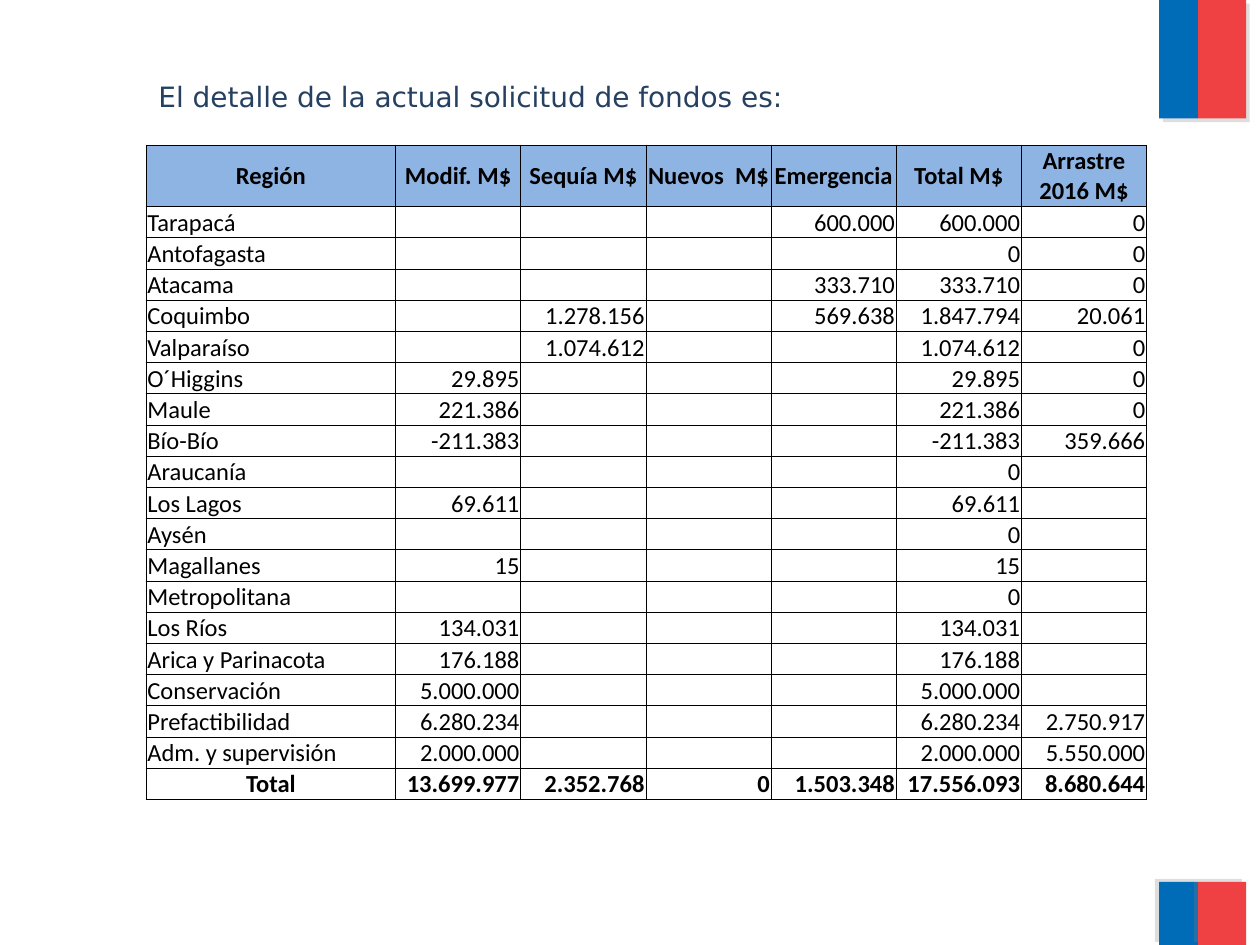
import pptx
import pptx.util
import pptx.dml.color
import pptx.enum.shapes
import pptx.enum.text
import pptx.oxml
import pptx.oxml.ns
import lxml.etree

Inches, Pt = pptx.util.Inches, pptx.util.Pt
ALIGN = pptx.enum.text.PP_ALIGN
ANCHOR = pptx.enum.text.MSO_ANCHOR
qn = pptx.oxml.ns.qn

COLORS = {"blue": "006CB7", "red": "EF4144", "shade": "808080",
          "title": "254061", "head": "8EB4E3", "ink": "000000"}

TITLE = "El detalle de la actual solicitud de fondos es:"
HEAD = ["Región", "Modif. M$", "Sequía M$", "Nuevos  M$", "Emergencia",
        "Total M$", "Arrastre 2016 M$"]
BODY = [
    ("Tarapacá", "", "", "", "600.000", "600.000", "0"),
    ("Antofagasta", "", "", "", "", "0", "0"),
    ("Atacama", "", "", "", "333.710", "333.710", "0"),
    ("Coquimbo", "", "1.278.156", "", "569.638", "1.847.794", "20.061"),
    ("Valparaíso", "", "1.074.612", "", "", "1.074.612", "0"),
    ("O´Higgins", "29.895", "", "", "", "29.895", "0"),
    ("Maule", "221.386", "", "", "", "221.386", "0"),
    ("Bío-Bío", "-211.383", "", "", "", "-211.383", "359.666"),
    ("Araucanía", "", "", "", "", "0", ""),
    ("Los Lagos", "69.611", "", "", "", "69.611", ""),
    ("Aysén", "", "", "", "", "0", ""),
    ("Magallanes", "15", "", "", "", "15", ""),
    ("Metropolitana", "", "", "", "", "0", ""),
    ("Los Ríos", "134.031", "", "", "", "134.031", ""),
    ("Arica y Parinacota", "176.188", "", "", "", "176.188", ""),
    ("Conservación", "5.000.000", "", "", "", "5.000.000", ""),
    ("Prefactibilidad", "6.280.234", "", "", "", "6.280.234", "2.750.917"),
    ("Adm. y supervisión", "2.000.000", "", "", "", "2.000.000", "5.550.000"),
]
TOTAL = ("Total", "13.699.977", "2.352.768", "0", "1.503.348",
         "17.556.093", "8.680.644")
ROWS = [HEAD, *BODY, TOTAL]

BANDS = [("blue", 9.2, 0.31), ("red", 9.51, 0.38)]
FLAGS = [(0, 0.94, 45), (7, 0.5, 215)]
LEFT, TOP, WIDE, HIGH = 1.16, 1.15, 7.94, 5.2
FIRST, HEAD_H = 1.98, 0.49
INSET = {"margin_left": Inches(0.01), "margin_right": Inches(0.01),
         "margin_top": Inches(0.01), "margin_bottom": 0}


def rgb(name):
    return pptx.dml.color.RGBColor.from_string(COLORS[name])


def style(item, values):
    for key, value in values.items():
        setattr(item, key, value)


def write(para, text, color, values):
    run = para.add_run()
    run.text = text
    style(run.font, values)
    run.font.color.rgb = rgb(color)


def add_band(slide, color, left, top, width, height, angle):
    band = slide.shapes.add_shape(
        pptx.enum.shapes.MSO_SHAPE.RECTANGLE,
        Inches(left), Inches(top), Inches(width), Inches(height))
    band.fill.solid()
    band.fill.fore_color.rgb = rgb(color)
    band.line.fill.background()
    band.shadow.inherit = False
    glow = band._element.spPr.find(qn("a:effectLst"))
    cast = lxml.etree.SubElement(
        glow, qn("a:outerShdw"), blurRad="0", dist=str(Pt(3)),
        dir=str(angle * 60000), algn="ctr", rotWithShape="0")
    tint = lxml.etree.SubElement(cast, qn("a:srgbClr"), val=COLORS["shade"])
    lxml.etree.SubElement(tint, qn("a:alpha"), val="25000")


def add_title(slide):
    box = slide.shapes.add_textbox(Inches(LEFT), Inches(0.54), Inches(7.56), Inches(0.38))
    frame = box.text_frame
    frame.word_wrap = True
    para = frame.paragraphs[0]
    style(para, {"alignment": ALIGN.JUSTIFY, "line_spacing": 1.15,
                 "space_after": Pt(10)})
    props = para._p.get_or_add_pPr()
    props.set("marL", str(Inches(0.3)))
    props.set("indent", str(-Inches(0.3)))
    write(para, TITLE, "title", {"size": Pt(16), "name": "DejaVu Sans"})


def add_edges(cell):
    props = cell._tc.get_or_add_tcPr()
    for spot, side in enumerate("LRTB"):
        edge = pptx.oxml.parse_xml(
            f'<a:ln{side} {pptx.oxml.ns.nsdecls("a")} w="{Pt(0.5)}"><a:solidFill>'
            f'<a:srgbClr val="{COLORS["ink"]}"/></a:solidFill></a:ln{side}>')
        props.insert(spot, edge)


def fill_cell(cell, text, row, col):
    head, last = row == 0, row == len(ROWS) - 1
    style(cell, {**INSET, "vertical_anchor": ANCHOR.MIDDLE if head else ANCHOR.BOTTOM})
    if head:
        cell.fill.solid()
        cell.fill.fore_color.rgb = rgb("head")
    else:
        cell.fill.background()
    add_edges(cell)
    para = cell.text_frame.paragraphs[0]
    if head or (last and col == 0):
        para.alignment = ALIGN.CENTER
    else:
        para.alignment = ALIGN.RIGHT if col else ALIGN.LEFT
    if text:
        write(para, text, "ink", {"size": Pt(14), "name": "Calibri",
                                  "bold": head or last})
    else:
        lxml.etree.SubElement(para._p, qn("a:endParaRPr"), sz="1400")


def add_grid(slide):
    grid = slide.shapes.add_table(
        len(ROWS), len(HEAD), Inches(LEFT), Inches(TOP),
        Inches(WIDE), Inches(HIGH)).table
    style(grid, {"first_row": False, "horz_banding": False})
    for col, part in enumerate(grid.columns):
        part.width = Inches((WIDE - FIRST) / (len(HEAD) - 1) if col else FIRST)
    for row, part in enumerate(grid.rows):
        part.height = Inches((HIGH - HEAD_H) / (len(ROWS) - 1) if row else HEAD_H)
        for col, text in enumerate(ROWS[row]):
            fill_cell(grid.cell(row, col), text, row, col)


def main():
    deck = pptx.Presentation()
    style(deck, {"slide_width": Inches(10), "slide_height": Inches(7.5)})
    slide = deck.slides.add_slide(deck.slide_layouts[6])
    for top, height, angle in FLAGS:
        for color, left, width in BANDS:
            add_band(slide, color, left, top, width, height, angle)
    add_title(slide)
    add_grid(slide)
    deck.save("out.pptx")


if __name__ == "__main__":
    main()
